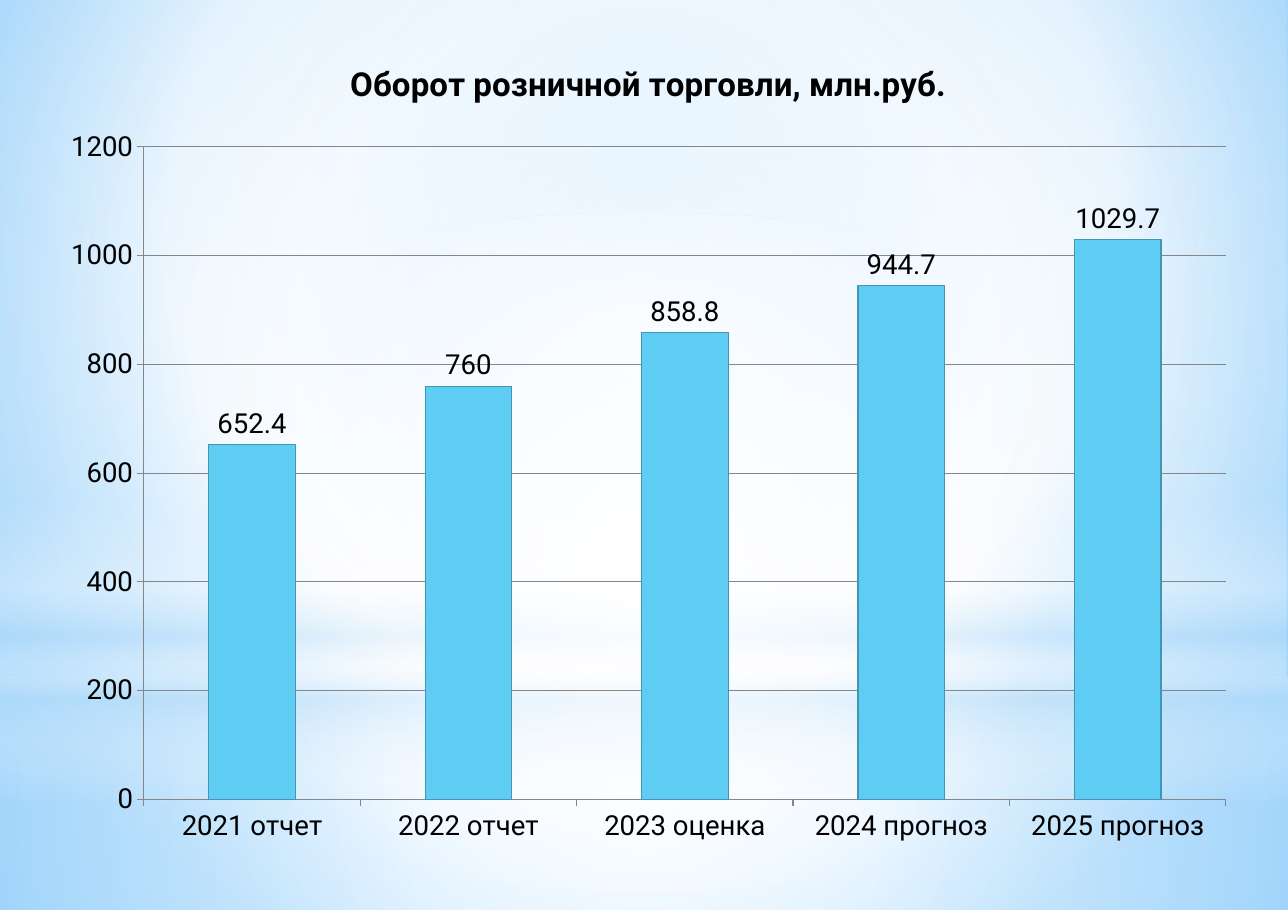
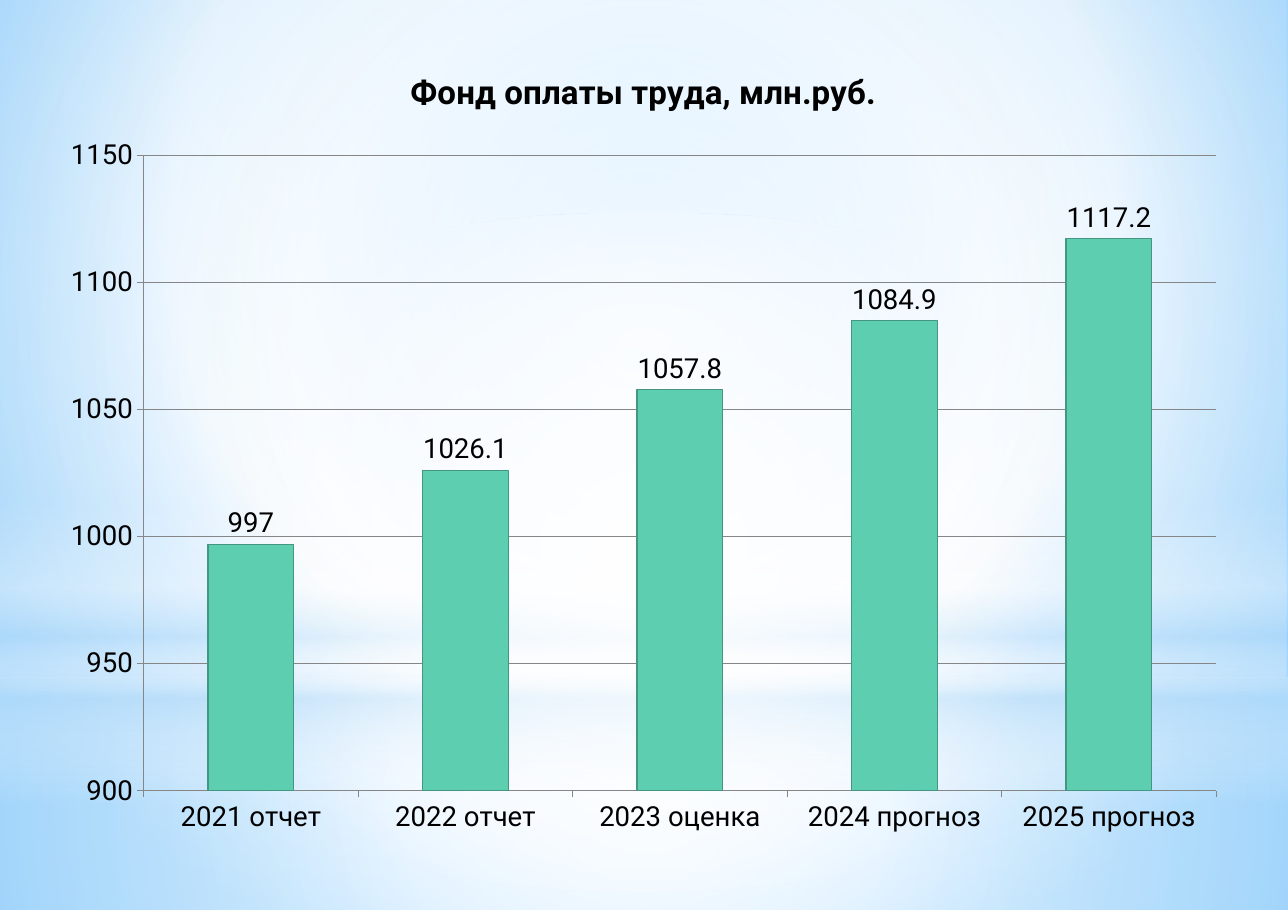
from lxml.etree import SubElement
from pptx import Presentation
from pptx.chart.data import CategoryChartData
from pptx.dml.color import RGBColor
from pptx.enum.chart import XL_CHART_TYPE as ChartType, XL_LABEL_POSITION as LabelPosition
from pptx.enum.chart import XL_TICK_MARK as TickMark
from pptx.enum.shapes import MSO_SHAPE as Shape
from pptx.oxml.ns import qn
from pptx.util import Pt

PX = 914400 / 110.2
WIDTH, HEIGHT = 1288, 910
FONT = "Roboto"
COLORS = {
    "text": "000000", "axis": "868686",
    "sky": "9ED5FF", "deep": "5BB9FF", "white": "FFFFFF", "haze": "B4DCFA",
    "blue": "5ECCF3", "blue edge": "4495B2",
    "green": "5DCEAF", "green edge": "449680",
}

# Gradient stops: position %, colour, opacity %
BACKDROP = [(0, "sky", 100), (60, "white", 100), (100, "deep", 100)]
BACKDROP_FOCUS = (20, 10, 20, 60)
CENTER = (50, 50, 50, 50)
# Outline, top, height, stops, focus (None runs top to bottom)
GLOWS = [
    (Shape.RECTANGLE, 678, 232,
     [(0, "white", 91), (37, "white", 76), (100, "haze", 79)], CENTER),
    (Shape.RECTANGLE, 0, 678,
     [(0, "white", 89), (48, "white", 62), (100, "haze", 79)], CENTER),
    (Shape.RECTANGLE, 500, 303,
     [(0, "white", 0), (29, "white", 30), (45, "haze", 40),
      (55, "white", 26), (65, "haze", 60), (100, "white", 0)], None),
    (Shape.OVAL, 213, 678, [(0, "white", 100), (56, "white", 0)], CENTER),
]

YEARS = ["2021 отчет", "2022 отчет", "2023 оценка", "2024 прогноз", "2025 прогноз"]
INDICATORS = [
    {"title": "Оборот розничной торговли, млн.руб.",
     "values": [652.4, 760, 858.8, 944.7, 1029.7],
     "scale": (0, 1200, 200), "color": "blue", "box": (47, 33, 1203, 826)},
    {"title": "Фонд оплаты труда, млн.руб.",
     "values": [997, 1026.1, 1057.8, 1084.9, 1117.2],
     "scale": (900, 1150, 50), "color": "green", "box": (47, 42, 1193, 808)},
]


def emu(*lengths):
    return [round(length * PX) for length in lengths]


def rgb(name):
    return RGBColor.from_string(COLORS[name])


def set_gradient(fill, holder, stops, focus):
    """Swap the fill inside the XML element holder for a gradient."""
    fill.solid()
    solid = next(holder.iter(qn("a:solidFill")))
    parent = solid.getparent()
    gradient = SubElement(parent, qn("a:gradFill"), rotWithShape="1")
    parent.replace(solid, gradient)
    stop_list = SubElement(gradient, qn("a:gsLst"))
    for position, color, opacity in stops:
        stop = SubElement(stop_list, qn("a:gs"), pos=str(position * 1000))
        tint = SubElement(stop, qn("a:srgbClr"), val=COLORS[color])
        if opacity < 100:
            SubElement(tint, qn("a:alpha"), val=str(opacity * 1000))
    if focus:
        center = SubElement(gradient, qn("a:path"), path="circle")
        SubElement(center, qn("a:fillToRect"),
                   {side: str(share * 1000) for side, share in zip("ltrb", focus)})
    else:
        SubElement(gradient, qn("a:lin"), ang="5400000", scaled="0")


def decorate_master(master, slide):
    """Draw the glows on a slide, then move them to the master."""
    set_gradient(master.background.fill, master.element, BACKDROP, BACKDROP_FOCUS)
    master_tree = next(master.element.iter(qn("p:spTree")))
    for outline, top, height, stops, focus in GLOWS:
        glow = slide.shapes.add_shape(outline, *emu(0, top, WIDTH, height))
        glow.shadow.inherit = False
        glow.line.fill.background()
        set_gradient(glow.fill, glow.element.spPr, stops, focus)
        master_tree.append(glow.element)


def style_axis(axis):
    axis.major_tick_mark = TickMark.OUTSIDE
    axis.minor_tick_mark = TickMark.NONE
    axis.format.line.color.rgb = rgb("axis")
    axis.format.line.width = Pt(0.75)


def add_column_chart(slide, indicator):
    data = CategoryChartData()
    data.categories = YEARS
    data.add_series(indicator["title"], indicator["values"])
    chart = slide.shapes.add_chart(
        ChartType.COLUMN_CLUSTERED, *emu(*indicator["box"]), data).chart
    chart.has_legend = False
    chart.font.name = FONT
    chart.font.size = Pt(18)
    chart.font.color.rgb = rgb("text")

    chart.has_title = True
    chart.chart_title.include_in_layout = False
    heading = chart.chart_title.text_frame
    heading.text = indicator["title"]
    heading_font = heading.paragraphs[0].font
    heading_font.name, heading_font.size, heading_font.bold = FONT, Pt(21.6), True
    heading_font.color.rgb = rgb("text")

    amounts = chart.value_axis
    for axis in (chart.category_axis, amounts):
        style_axis(axis)
    amounts.minimum_scale, amounts.maximum_scale, amounts.major_unit = indicator["scale"]
    amounts.has_major_gridlines = True
    gridline = amounts.major_gridlines.format.line
    gridline.color.rgb = rgb("axis")
    gridline.width = Pt(0.75)

    plot = chart.plots[0]
    plot.gap_width = 150
    plot.vary_by_categories = False
    plot.has_data_labels = True
    plot.data_labels.show_value = True
    plot.data_labels.position = LabelPosition.OUTSIDE_END
    columns = plot.series[0].format
    columns.fill.solid()
    columns.fill.fore_color.rgb = rgb(indicator["color"])
    columns.line.color.rgb = rgb(indicator["color"] + " edge")
    columns.line.width = Pt(0.75)


def main():
    prs = Presentation()
    prs.slide_width, prs.slide_height = emu(WIDTH, HEIGHT)
    blank = prs.slide_layouts[6]
    slides = [prs.slides.add_slide(blank) for _ in INDICATORS]
    decorate_master(prs.slide_master, slides[0])
    for slide, indicator in zip(slides, INDICATORS):
        add_column_chart(slide, indicator)
    prs.save("out.pptx")


if __name__ == "__main__":
    main()
